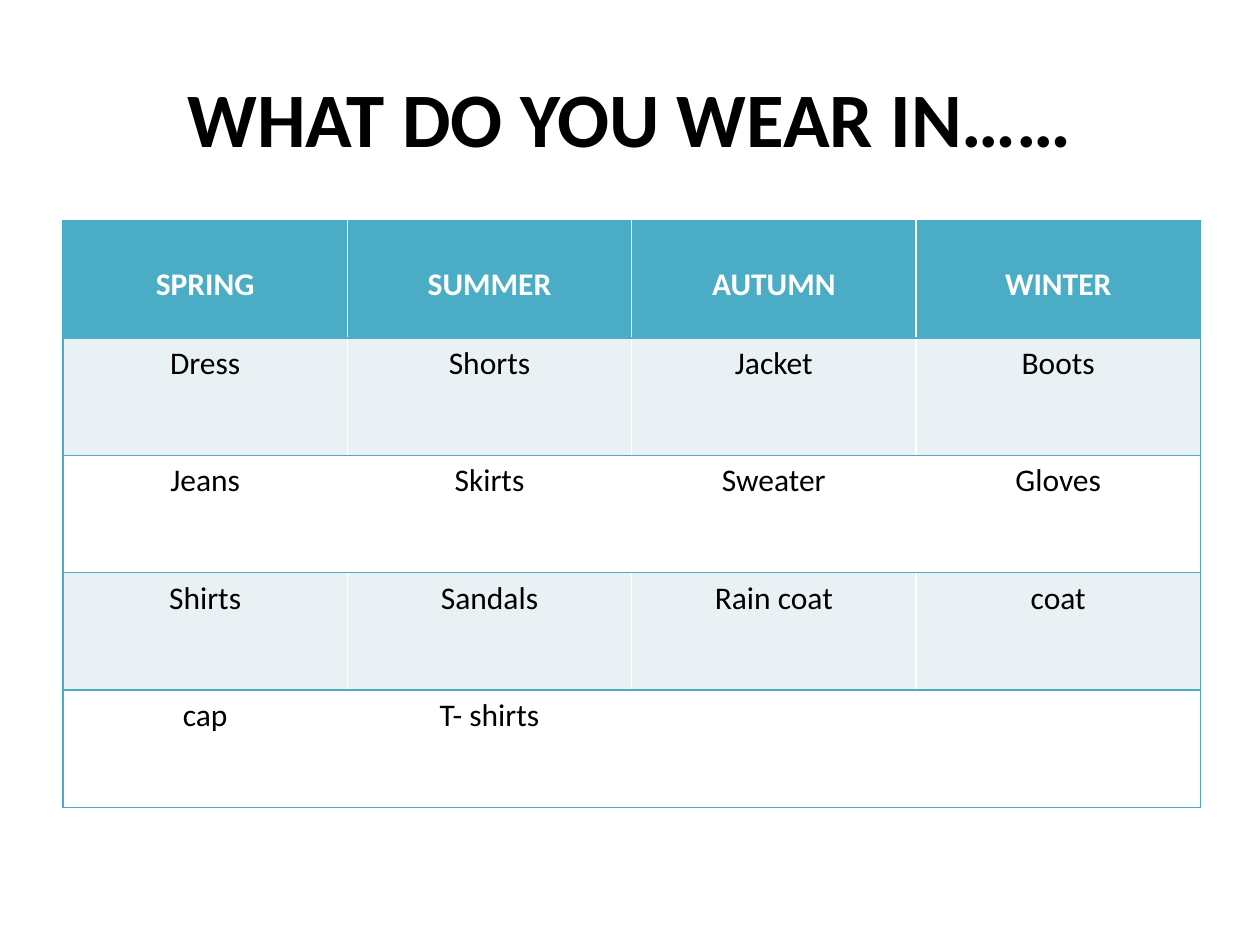
from lxml import etree
from pptx import Presentation
from pptx import util as u
from pptx.dml.color import RGBColor
from pptx.enum import text
from pptx.oxml.ns import qn

BLACK = RGBColor(0x00, 0x00, 0x00)
WHITE = RGBColor(0xFF, 0xFF, 0xFF)
TEAL = RGBColor(0x4B, 0xAC, 0xC6)
PALE = RGBColor(0xE9, 0xF1, 0xF5)

CLOTHES = [
    ["SPRING", "SUMMER", "AUTUMN", "WINTER"],
    ["Dress", "Shorts", "Jacket", "Boots"],
    ["Jeans", "Skirts", "Sweater", "Gloves"],
    ["Shirts", "Sandals", "Rain coat", "coat"],
    ["cap", "T- shirts", "", ""],
]


def write(frame, words, size=18, color=BLACK, bold=False, font="Calibri"):
    para = frame.paragraphs[0]
    para.alignment = text.PP_ALIGN.CENTER
    para.font.size = u.Pt(size)
    if words:
        span = para.add_run()
        span.text = words
        span.font.name = font
        span.font.size = u.Pt(size)
        span.font.bold = bold
        span.font.color.rgb = color


def add_borders(cell, sides, color, width=1):
    """Draw cell borders; sides must keep the order L, R, T, B."""
    properties = cell._tc.get_or_add_tcPr()
    for side in sides:
        line = etree.SubElement(properties, qn(f"a:ln{side}"), w=str(u.Pt(width)))
        fill = etree.SubElement(line, qn("a:solidFill"))
        etree.SubElement(fill, qn("a:srgbClr"), val=str(color))


class SeasonSlide:
    """Holds the current slide and the colours of its table."""

    def __init__(self, deck, accent=TEAL, bands=(WHITE, PALE)):
        self.page = deck.slides.add_slide(deck.slide_layouts[5])
        self.accent = accent
        self.bands = bands

    def title(self, words, left, top, width, height):
        box = self.page.shapes.title
        box.left, box.top = u.Pt(left), u.Pt(top)
        box.width, box.height = u.Pt(width), u.Pt(height)
        box.text_frame.vertical_anchor = text.MSO_ANCHOR.MIDDLE
        write(box.text_frame, words, size=44, bold=True)

    def table(self, rows, left, top, column_width, row_height):
        row_count, column_count = len(rows), len(rows[0])
        grid = self.page.shapes.add_table(
            row_count, column_count, u.Pt(left), u.Pt(top),
            u.Pt(column_width * column_count), u.Pt(row_height * row_count)).table
        for column in grid.columns:
            column.width = u.Pt(column_width)
        for row_index, words_in_row in enumerate(rows):
            grid.rows[row_index].height = u.Pt(row_height)
            header = row_index == 0
            for column_index, words in enumerate(words_in_row):
                cell = grid.cell(row_index, column_index)
                sides = "TB"
                if column_index == 0:
                    sides = "L" + sides
                elif column_index == column_count - 1:
                    sides = "R" + sides
                add_borders(cell, sides, self.accent)
                cell.fill.solid()
                cell.fill.fore_color.rgb = self.accent if header else self.bands[row_index % 2]
                if header:
                    cell.margin_top = u.Pt(25.6)
                write(cell.text_frame, words, color=WHITE if header else BLACK, bold=header)


def main():
    deck = Presentation()
    deck.slide_width, deck.slide_height = u.Pt(720), u.Pt(540)
    slide = SeasonSlide(deck)
    slide.title("WHAT DO YOU WEAR IN……", 36, 21.6, 648, 90)
    slide.table(CLOTHES, 36, 126, column_width=162.5, row_height=67.1)
    deck.save("out.pptx")


if __name__ == "__main__":
    main()
